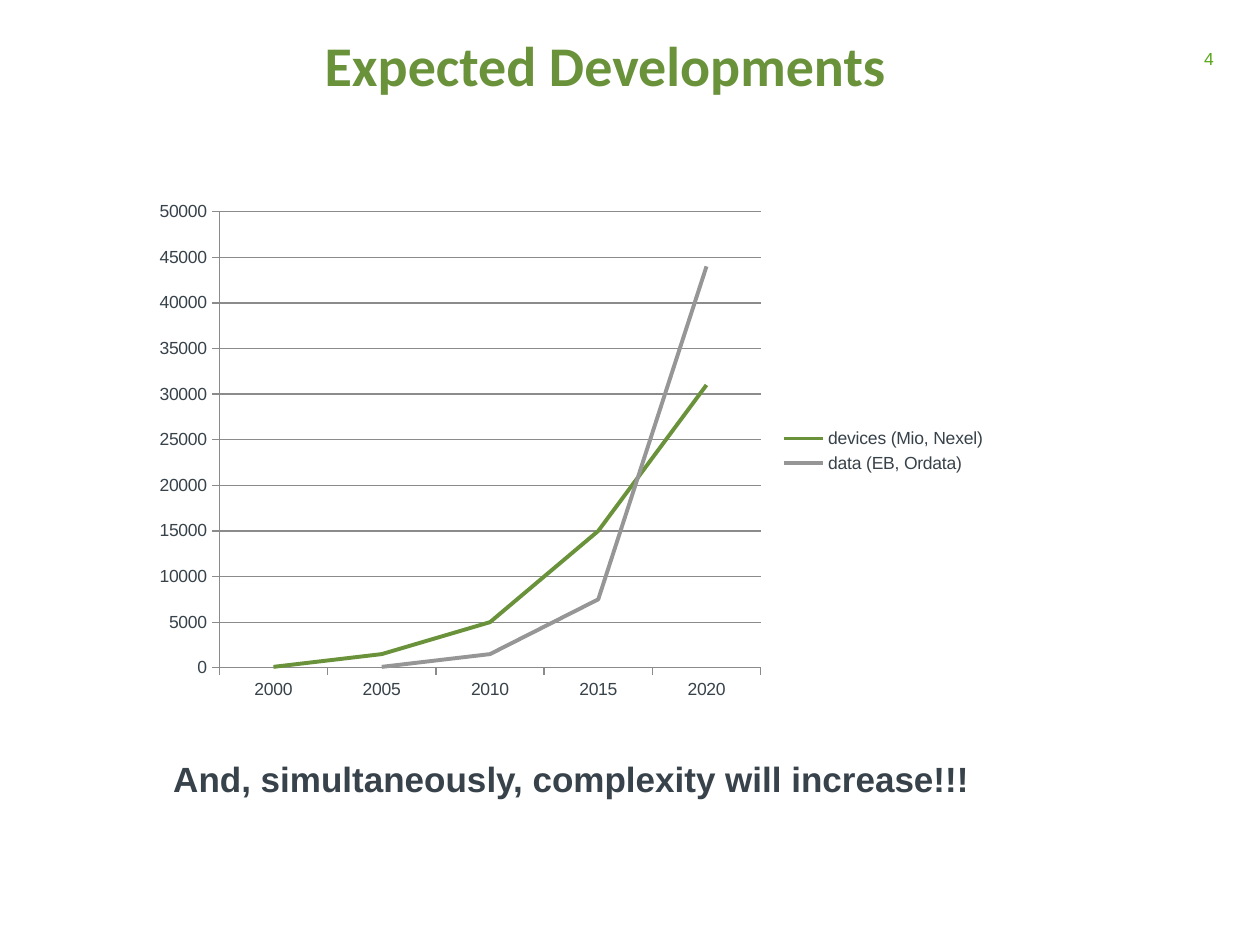
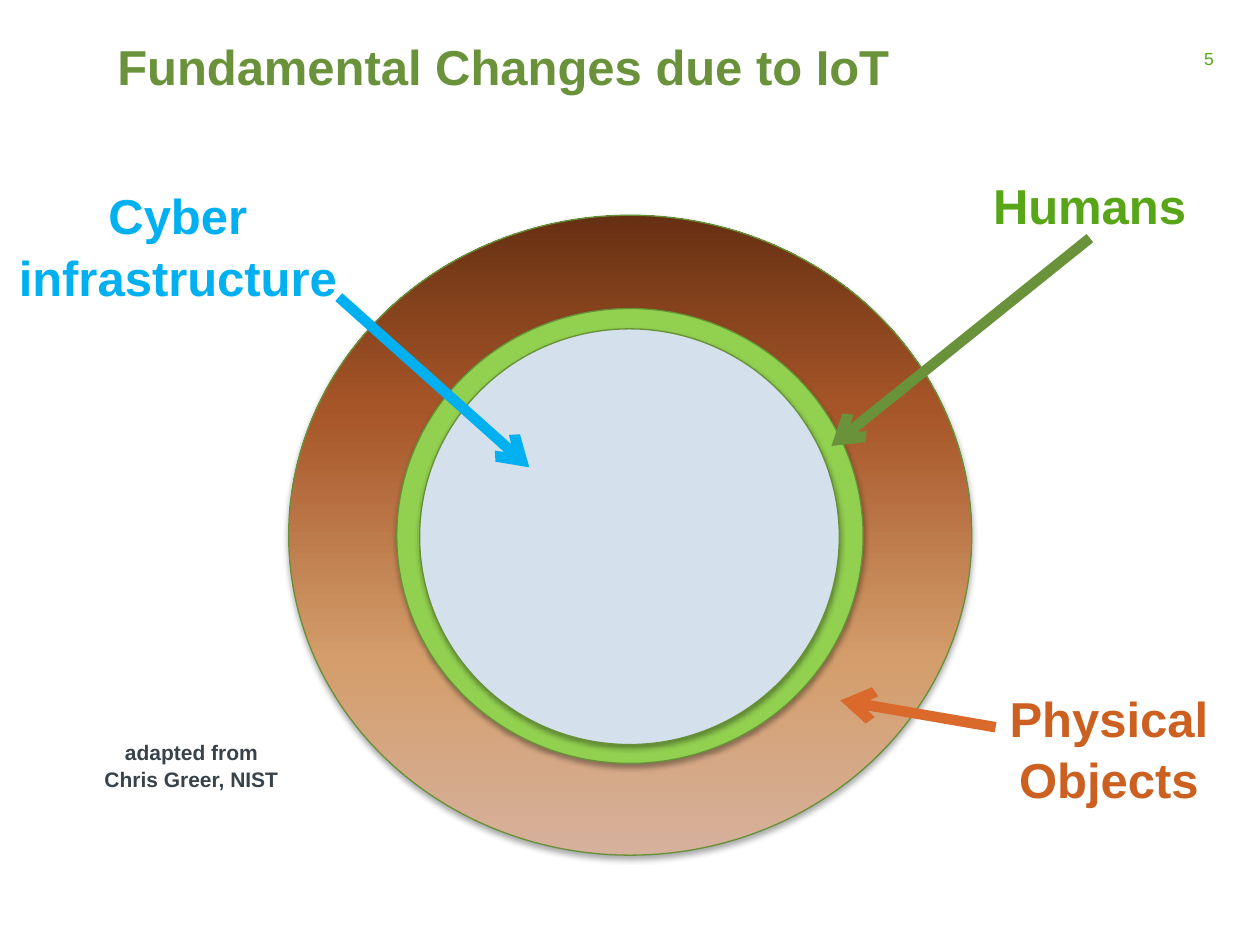
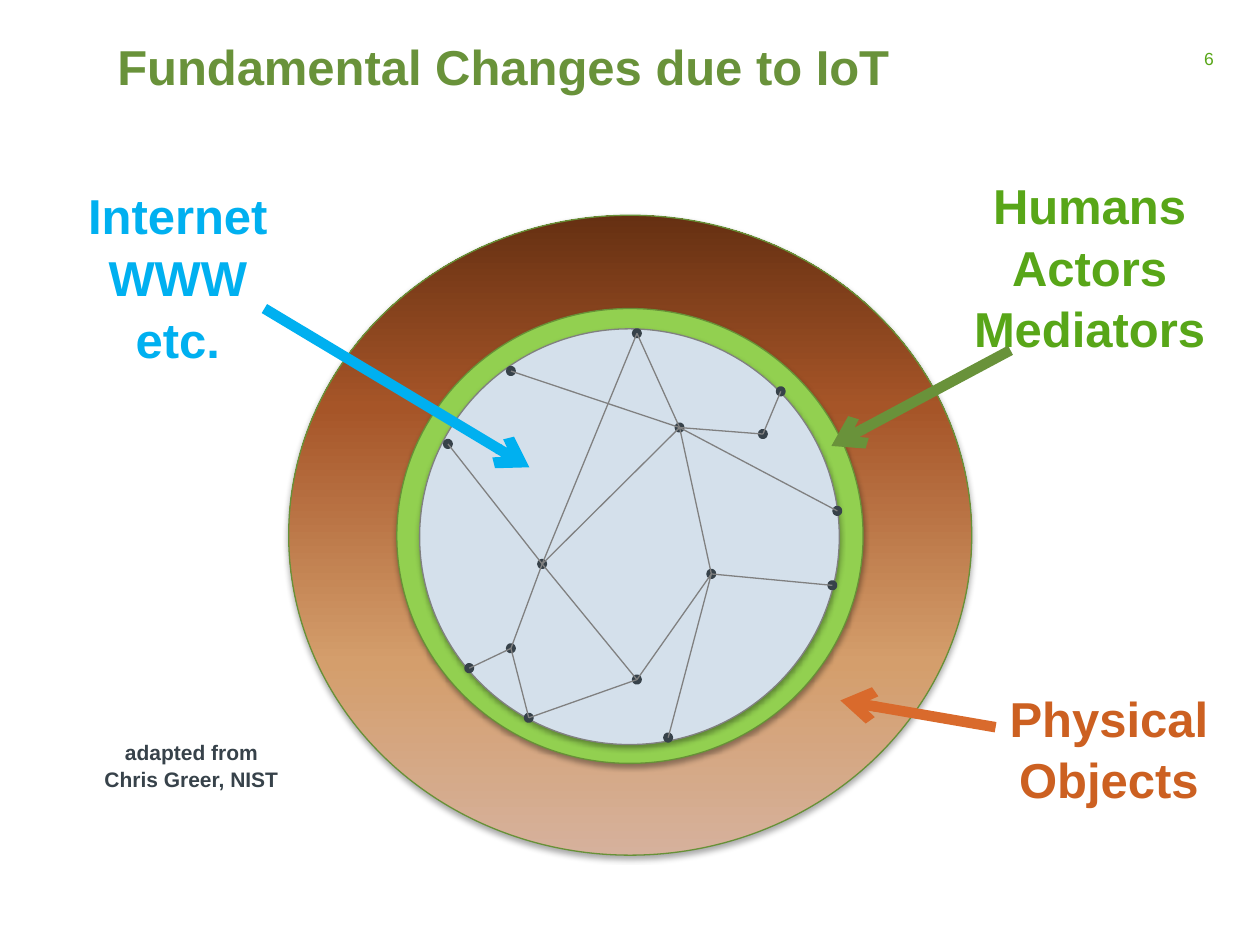
from copy import deepcopy

from lxml.etree import SubElement
from pptx import Presentation
from pptx.chart.data import CategoryChartData
from pptx.dml.color import RGBColor
from pptx.enum.chart import XL_CHART_TYPE, XL_LEGEND_POSITION, XL_MARKER_STYLE, XL_TICK_MARK
from pptx.enum.shapes import MSO_CONNECTOR, MSO_SHAPE
from pptx.enum.text import MSO_ANCHOR, MSO_AUTO_SIZE, PP_ALIGN
from pptx.oxml.ns import qn
from pptx.util import Cm, Pt

TITLE_GREEN = RGBColor(0x69, 0x92, 0x3A)
BRIGHT_GREEN = RGBColor(0x58, 0xA6, 0x18)
RING_GREEN = RGBColor(0x92, 0xD0, 0x50)
OUTLINE_GREEN = RGBColor(0x67, 0x91, 0x37)
SLATE = RGBColor(0x37, 0x42, 0x4A)
GRAY = RGBColor(0x80, 0x80, 0x80)
AXIS_GRAY = RGBColor(0x8B, 0x8B, 0x8B)
SERIES_GRAY = RGBColor(0x96, 0x96, 0x96)
CYBER_BLUE = RGBColor(0x00, 0xB0, 0xF0)
CORE_BLUE = RGBColor(0xD4, 0xE0, 0xEB)
RUST = RGBColor(0xCC, 0x60, 0x21)
ORANGE = RGBColor(0xD9, 0x6A, 0x2C)
WHITE = RGBColor(0xFF, 0xFF, 0xFF)
EARTH_STOPS = [
    (0, RGBColor(0xD6, 0xB1, 0x9C)),
    (0.3, RGBColor(0xD4, 0x9E, 0x6C)),
    (0.7, RGBColor(0xA6, 0x55, 0x28)),
    (1, RGBColor(0x66, 0x30, 0x12)),
]

YEARS = ["2000", "2005", "2010", "2015", "2020"]
GROWTH = [
    ("devices (Mio, Nexel)", [100, 1500, 5000, 15000, 31000], TITLE_GREEN),
    ("data (EB, Ordata)", [None, 100, 1500, 7500, 44000], SERIES_GRAY),
]

IOT_TITLE = "Fundamental Changes due to IoT"
OUTER_RING = (5.82, 4.34, 13.77, 12.9)
HUMAN_RING = (8, 6.22, 9.4, 9.17)
CORE = (8.46, 6.63, 8.46, 8.38)

PHYSICAL_LABEL = ("Physical\nObjects", (20.07, 13.69, 4.57, 2.64), RUST)
PHYSICAL_ARROW = ((20.07, 14.66), (16.94, 14.12), ORANGE)
CYBER_TIP = (10.67, 9.42)
HUMAN_TIP = (16.76, 8.99)
OVERVIEW = {
    "labels": [
        ("Cyber\ninfrastructure", (0.08, 3.56, 7.01, 2.64), CYBER_BLUE),
        ("Humans", (19.74, 3.35, 4.45, 1.45), BRIGHT_GREEN),
        PHYSICAL_LABEL,
    ],
    "arrows": [
        ((6.83, 5.99), CYBER_TIP, CYBER_BLUE),
        ((21.97, 4.8), HUMAN_TIP, TITLE_GREEN),
        PHYSICAL_ARROW,
    ],
}
DETAIL = {
    "labels": [
        ("Internet\nWWW\netc.", (1.5, 3.56, 4.17, 3.84), CYBER_BLUE),
        ("Humans\nActors\nMediators", (19.35, 3.35, 5.23, 3.84), BRIGHT_GREEN),
        PHYSICAL_LABEL,
    ],
    "arrows": [
        ((5.33, 6.22), CYBER_TIP, CYBER_BLUE),
        ((20.37, 7.06), HUMAN_TIP, TITLE_GREEN),
        PHYSICAL_ARROW,
    ],
}

NODE_SIZE = 0.13
NODES = {
    "top": (12.84, 6.72),
    "hub": (13.7, 8.62),
    "west": (10.93, 11.37),
    "east": (14.34, 11.57),
    "south": (12.84, 13.7),
    "bottom": (13.47, 14.87),
    "left rim": (9.03, 8.95),
    "lower left": (10.3, 13.07),
    "lower left rim": (9.46, 13.47),
    "bottom left rim": (10.66, 14.47),
    "upper left rim": (10.3, 7.48),
    "upper right": (15.38, 8.75),
    "upper right rim": (15.74, 7.89),
    "right rim": (16.88, 10.3),
    "lower right rim": (16.78, 11.8),
}
LINKS = [
    ("left rim", "west"), ("hub", "west"), ("west", "lower left"), ("top", "west"),
    ("top", "hub"), ("hub", "east"), ("west", "south"), ("east", "bottom"),
    ("east", "south"), ("lower right rim", "east"), ("lower left", "lower left rim"),
    ("lower left", "bottom left rim"), ("hub", "upper right"), ("hub", "right rim"),
    ("south", "bottom left rim"), ("upper right", "upper right rim"),
    ("upper left rim", "hub"),
]


def lengths(values):
    """Turn plain numbers into centimetre lengths."""
    return [Cm(value) for value in values]


def write_text(shape, text, size=28, color=SLATE, font="Arial", bold=True,
               align=PP_ALIGN.CENTER, anchor=MSO_ANCHOR.TOP, wrap=True, spacing=1):
    """Write one paragraph per line of text into a shape."""
    frame = shape.text_frame
    frame.auto_size = MSO_AUTO_SIZE.NONE
    frame.word_wrap = wrap
    frame.vertical_anchor = anchor
    frame.text = text
    for paragraph in frame.paragraphs:
        paragraph.alignment = align
        paragraph.line_spacing = spacing
        paragraph.font.name = font
        paragraph.font.size = Pt(size)
        paragraph.font.bold = bold
        paragraph.font.color.rgb = color


def add_label(slide, text, box, **text_format):
    """Add a text box with formatted text."""
    write_text(slide.shapes.add_textbox(*lengths(box)), text, **text_format)


def add_slide(presentation, number, title, box, **title_format):
    """Add a slide with its title and number."""
    slide = presentation.slides.add_slide(presentation.slide_layouts[5])
    heading = slide.shapes.title
    heading.left, heading.top, heading.width, heading.height = lengths(box)
    write_text(heading, title, color=TITLE_GREEN, **title_format)
    add_label(slide, str(number), (23.09, 0.91, 1.63, 0.56), size=10, bold=False,
              color=BRIGHT_GREEN, align=PP_ALIGN.RIGHT, anchor=MSO_ANCHOR.MIDDLE)
    return slide


def add_filled(slide, preset, box, fill, line=None, width=0.75):
    """Add a flat preset shape."""
    shape = slide.shapes.add_shape(preset, *lengths(box))
    shape.shadow.inherit = False
    shape.fill.solid()
    shape.fill.fore_color.rgb = fill
    if line is None:
        shape.line.fill.background()
    else:
        shape.line.color.rgb = line
        shape.line.width = Pt(width)
    return shape


def add_disc(slide, box, fill, line=OUTLINE_GREEN):
    """Add an ellipse with a soft shadow below it."""
    disc = add_filled(slide, MSO_SHAPE.OVAL, box, fill, line)
    effects = disc.element.spPr.find(qn("a:effectLst"))
    shadow = SubElement(effects, qn("a:outerShdw"), blurRad="40000", dist="23000",
                        dir="5400000", rotWithShape="0")
    black = SubElement(shadow, qn("a:srgbClr"), val="000000")
    SubElement(black, qn("a:alpha"), val="35000")
    return disc


def fill_gradient(shape, stops, angle):
    """Fill a shape with a linear gradient of any number of stops."""
    shape.fill.gradient()
    shape.fill.gradient_angle = angle
    stop_list = shape.element.spPr.find(".//" + qn("a:gsLst"))
    while len(stop_list) < len(stops):
        stop_list.append(deepcopy(stop_list[0]))
    for stop, (position, color) in zip(shape.fill.gradient_stops, stops):
        stop.position = position
        stop.color.rgb = color


def add_line(slide, start, end, color, width=0.75, arrow=False):
    """Add a straight line, with an arrowhead at its end if wanted."""
    line = slide.shapes.add_connector(MSO_CONNECTOR.STRAIGHT, *lengths(start + end))
    line.line.color.rgb = color
    line.line.width = Pt(width)
    if arrow:
        SubElement(line.line._get_or_add_ln(), qn("a:tailEnd"), type="arrow")
    SubElement(line.element.spPr, qn("a:effectLst"))


def add_growth_chart(slide, box):
    """Add the line chart of devices and data."""
    data = CategoryChartData()
    data.categories = YEARS
    for name, values, _ in GROWTH:
        data.add_series(name, values)
    chart = slide.shapes.add_chart(XL_CHART_TYPE.LINE, *lengths(box), data).chart
    chart.font.name = "Arial"
    chart.font.size = Pt(10)
    chart.font.color.rgb = SLATE
    chart.has_title = False
    chart.has_legend = True
    chart.legend.position = XL_LEGEND_POSITION.RIGHT
    chart.legend.include_in_layout = False
    chart.plots[0].vary_by_categories = False
    for series, (_, _, color) in zip(chart.plots[0].series, GROWTH):
        series.smooth = False
        series.marker.style = XL_MARKER_STYLE.NONE
        series.format.line.color.rgb = color
        series.format.line.width = Pt(2.25)
    chart.value_axis.has_major_gridlines = True
    axes = (chart.category_axis, chart.value_axis)
    for axis in axes:
        axis.major_tick_mark = XL_TICK_MARK.OUTSIDE
    for part in axes + (chart.value_axis.major_gridlines,):
        part.format.line.color.rgb = AXIS_GRAY
        part.format.line.width = Pt(0.75)


def add_network(slide):
    """Add the linked nodes inside the core."""
    for x, y in NODES.values():
        box = (x - NODE_SIZE / 2, y - NODE_SIZE / 2, NODE_SIZE, NODE_SIZE)
        add_filled(slide, MSO_SHAPE.DECAGON, box, SLATE, SLATE, 2)
    for start, end in LINKS:
        add_line(slide, NODES[start], NODES[end], GRAY)


def add_rings_slide(presentation, number, content, network=False):
    """Add a slide with the rings, their labels and arrows."""
    slide = add_slide(presentation, number, IOT_TITLE, (2.11, 0.61, 21.01, 2.72),
                      align=PP_ALIGN.LEFT)
    fill_gradient(add_disc(slide, OUTER_RING, RUST), EARTH_STOPS, 90)
    add_disc(slide, HUMAN_RING, RING_GREEN)
    add_disc(slide, CORE, CORE_BLUE, GRAY if network else OUTLINE_GREEN)
    if network:
        add_network(slide)
    for text, box, color in content["labels"]:
        add_label(slide, text, box, color=color, wrap=False, spacing=1.05)
    for start, end, color in content["arrows"]:
        add_line(slide, start, end, color, 6, arrow=True)
    add_label(slide, "adapted from\nChris Greer, NIST", (1.6, 14.76, 4.52, 1.27),
              size=12, spacing=1.05)


def main():
    """Build the three slides."""
    presentation = Presentation()
    presentation.slide_width, presentation.slide_height = Cm(25.4), Cm(19.05)
    slide = add_slide(presentation, 4, "Expected Developments", (1.7, 0.48, 21.01, 2.26),
                      size=32, font="Calibri")
    add_growth_chart(slide, (2.87, 3.86, 17.27, 10.46))
    statement = add_filled(slide, MSO_SHAPE.RECTANGLE, (2.44, 15.14, 18.16, 1.52), WHITE)
    write_text(statement, "And, simultaneously, complexity will increase!!!", size=20)
    add_rings_slide(presentation, 5, OVERVIEW)
    add_rings_slide(presentation, 6, DETAIL, network=True)
    presentation.save("out.pptx")


if __name__ == "__main__":
    main()
